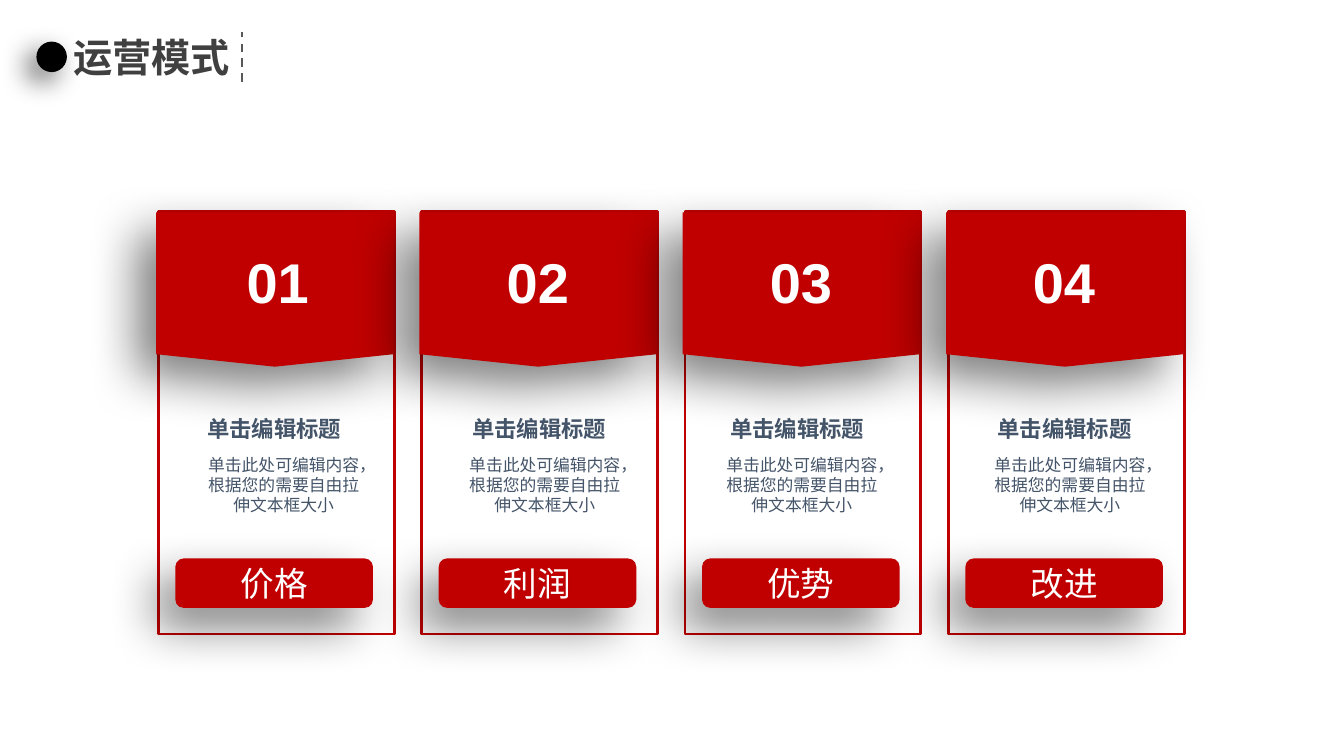
from dataclasses import dataclass

from lxml.etree import SubElement
from pptx import Presentation
from pptx.dml.color import RGBColor
from pptx.enum.dml import MSO_LINE
from pptx.enum.lang import MSO_LANGUAGE_ID as Language
from pptx.enum.shapes import MSO_CONNECTOR, MSO_SHAPE
from pptx.enum.text import MSO_ANCHOR, MSO_AUTO_SIZE, PP_ALIGN
from pptx.oxml.ns import qn
from pptx.shapes.autoshape import Shape
from pptx.slide import Slide
from pptx.text.text import TextFrame
from pptx.util import Pt

CHINESE_FONT = "Noto Sans CJK SC"
LATIN_FONT = "Arial"
RED = "C00000"
WHITE = "FFFFFF"
BLACK = "000000"
SLATE = "445469"
HEADING = "单击编辑标题"
BODY = "单击此处可编辑内容，根据您的需要自由拉伸文本框大小"

CARD_LEFT, CARD_TOP = 113.1, 151.2
CARD_WIDTH, CARD_HEIGHT = 168.5, 301.7
CARD_PITCH = 188.1


@dataclass(frozen=True)
class Box:
    left: float
    top: float
    width: float
    height: float


@dataclass(frozen=True)
class TextStyle:
    size: float
    color: str
    font: str = CHINESE_FONT
    bold: bool = False


@dataclass(frozen=True)
class Shadow:
    """Soft black shadow falling to the lower left."""
    opacity: int
    blur: float
    distance: float


@dataclass(frozen=True)
class Card:
    label: str
    number_left: float
    heading_left: float
    body_left: float


DOT_SHADOW = Shadow(60, 20, 10)
CARD_SHADOW = Shadow(50, 35, 20)
TITLE_STYLE = TextStyle(28, "404040", bold=True)
LABEL_STYLE = TextStyle(24, WHITE)
NUMBER_STYLE = TextStyle(40, WHITE, LATIN_FONT, True)
HEADING_STYLE = TextStyle(16, SLATE, LATIN_FONT, True)
BODY_STYLE = TextStyle(12, SLATE, LATIN_FONT)

CARDS = [
    Card("价格", 151.2, 103.7, 148.3),
    Card("利润", 337.0, 293.0, 334.8),
    Card("优势", 524.9, 477.4, 518.4),
    Card("改进", 712.8, 668.2, 709.9),
]


def rgb(value: str) -> RGBColor:
    return RGBColor.from_string(value)


def write(frame: TextFrame, text: str, style: TextStyle, align: PP_ALIGN) -> None:
    paragraph = frame.paragraphs[0]
    paragraph.alignment = align
    run = paragraph.add_run()
    run.text = text
    font = run.font
    font.size = Pt(style.size)
    font.bold = style.bold
    font.color.rgb = rgb(style.color)
    font.name = style.font
    font.language_id = Language.SIMPLIFIED_CHINESE
    run.font._element.find(qn("a:latin")).addnext(
        run.font._element.makeelement(qn("a:ea"), {"typeface": CHINESE_FONT}))


def add_text(slide: Slide, box: Box, text: str, style: TextStyle,
             align: PP_ALIGN = PP_ALIGN.CENTER, wrap: bool = True,
             inset: bool = True) -> None:
    shape = slide.shapes.add_textbox(
        Pt(box.left), Pt(box.top), Pt(box.width), Pt(box.height))
    frame = shape.text_frame
    frame.word_wrap = wrap
    frame.auto_size = MSO_AUTO_SIZE.SHAPE_TO_FIT_TEXT
    if not inset:
        frame.margin_left = frame.margin_right = Pt(0)
        frame.margin_top = frame.margin_bottom = Pt(0)
    write(frame, text, style, align)


def add_shape(slide: Slide, kind: MSO_SHAPE, box: Box, fill: str,
              outline: str | None = None, shadow: Shadow | None = None) -> Shape:
    shape = slide.shapes.add_shape(
        kind, Pt(box.left), Pt(box.top), Pt(box.width), Pt(box.height))
    shape.fill.solid()
    shape.fill.fore_color.rgb = rgb(fill)
    if outline:
        shape.line.color.rgb = rgb(outline)
        shape.line.width = Pt(2)
    else:
        shape.line.fill.background()
    shape.shadow.inherit = False
    if shadow:
        cast_shadow(shape, shadow)
    return shape


def cast_shadow(shape: Shape, shadow: Shadow) -> None:
    effects = shape._element.spPr.find(qn("a:effectLst"))
    outer = SubElement(effects, qn("a:outerShdw"), {
        "blurRad": str(Pt(shadow.blur)), "dist": str(Pt(shadow.distance)),
        "dir": str(135 * 60000), "algn": "tr", "rotWithShape": "0"})
    color = SubElement(outer, qn("a:srgbClr"), {"val": BLACK})
    SubElement(color, qn("a:alpha"), {"val": str(shadow.opacity * 1000)})


def add_title(slide: Slide) -> None:
    add_text(slide, Box(45.4, 20.2, 127.4, 41), "运营模式", TITLE_STYLE,
             PP_ALIGN.LEFT, wrap=False)
    divider = slide.shapes.add_connector(
        MSO_CONNECTOR.STRAIGHT, Pt(172.8), Pt(58.3), Pt(172.8), Pt(23))
    divider.line.color.rgb = rgb("595959")
    divider.line.width = Pt(1.5)
    divider.line.dash_style = MSO_LINE.DASH
    SubElement(divider._element.spPr, qn("a:effectLst"))
    add_shape(slide, MSO_SHAPE.OVAL, Box(26, 29.7, 21.8, 21.8), BLACK,
              shadow=DOT_SHADOW)


def add_card(slide: Slide, index: int, card: Card) -> None:
    left = CARD_LEFT + index * CARD_PITCH
    add_shape(slide, MSO_SHAPE.RECTANGLE,
              Box(left, CARD_TOP, CARD_WIDTH, CARD_HEIGHT), WHITE, RED)

    banner = add_shape(slide, MSO_SHAPE.PENTAGON,
                       Box(left + 28.1, 122, 110.2, 169.7), RED,
                       shadow=CARD_SHADOW)
    banner.adjustments[0] = 0.081
    banner.rotation = 90

    button = add_shape(slide, MSO_SHAPE.ROUNDED_RECTANGLE,
                       Box(left + 12.2, 398.9, 141.1, 35.3), RED,
                       shadow=CARD_SHADOW)
    button.text_frame.vertical_anchor = MSO_ANCHOR.MIDDLE
    write(button.text_frame, card.label, LABEL_STYLE, PP_ALIGN.CENTER)

    add_text(slide, Box(card.number_left, 173.5, 94.3, 55.4),
             f"{index + 1:02d}", NUMBER_STYLE)


def add_description(slide: Slide, card: Card) -> None:
    add_text(slide, Box(card.heading_left, 296.6, 184.3, 19.4), HEADING,
             HEADING_STYLE, inset=False)
    add_text(slide, Box(card.body_left, 324.7, 108.7, 43.9), BODY,
             BODY_STYLE, inset=False)


def main() -> None:
    presentation = Presentation()
    presentation.slide_width = Pt(960)
    presentation.slide_height = Pt(540)
    slide = presentation.slides.add_slide(presentation.slide_layouts[6])
    add_title(slide)
    for index, card in enumerate(CARDS):
        add_card(slide, index, card)
    for card in CARDS:
        add_description(slide, card)
    presentation.save("out.pptx")


if __name__ == "__main__":
    main()
